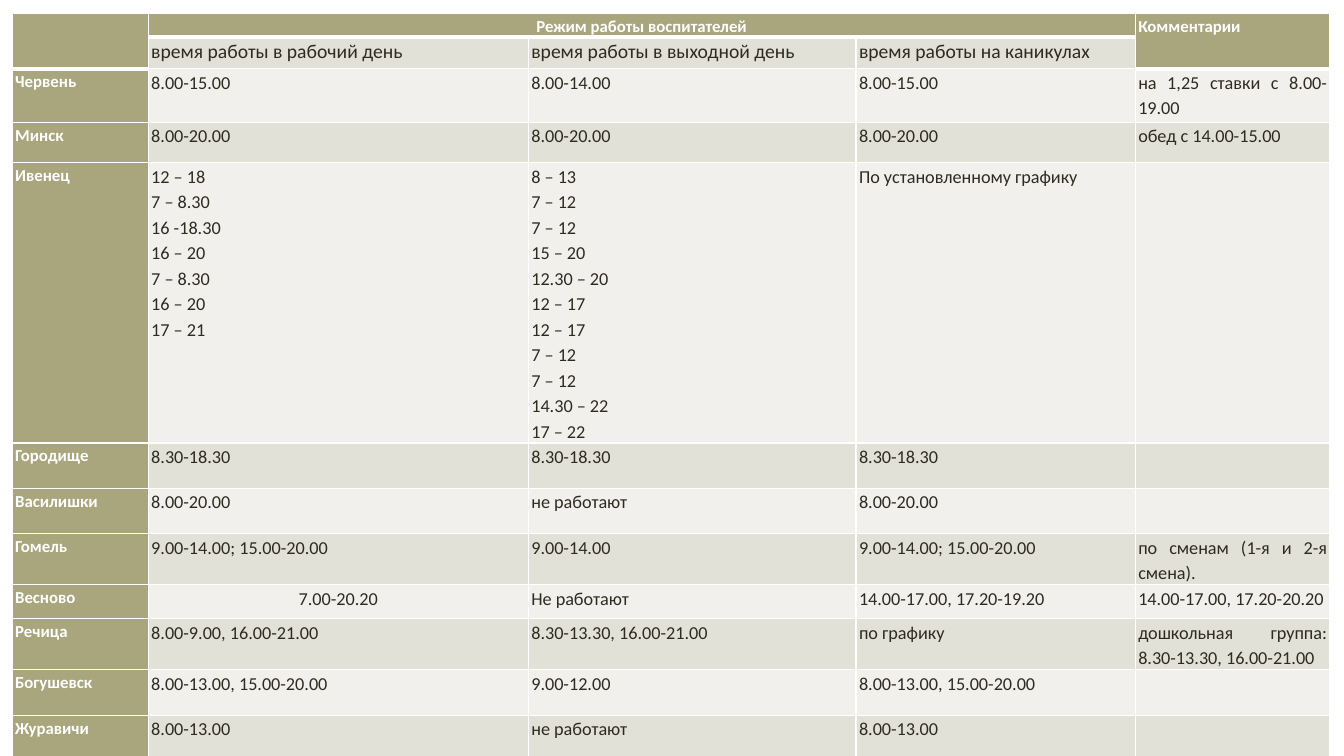
from lxml.etree import SubElement
from pptx import Presentation
from pptx.dml.color import RGBColor
from pptx.enum.text import PP_ALIGN
from pptx.oxml import parse_xml
from pptx.oxml.ns import nsdecls, qn
from pptx.util import Inches, Pt

# Content: town, working day, day off, holidays, comments
GROUP_TITLE = "Режим работы воспитателей"
COMMENTS_TITLE = "Комментарии"
SUBTITLES = [
    "время работы в рабочий день",
    "время работы в выходной день",
    "время работы на каникулах",
]
SCHEDULE = [
    ("Червень", "8.00-15.00", "8.00-14.00", "8.00-15.00", "на 1,25 ставки с 8.00-19.00"),
    ("Минск", "8.00-20.00", "8.00-20.00", "8.00-20.00", "обед с 14.00-15.00"),
    ("Ивенец",
     "12 – 18\n7 – 8.30\n16 -18.30\n16 – 20\n7 – 8.30\n16 – 20\n17 – 21",
     "8 – 13\n7 – 12\n7 – 12\n15 – 20\n12.30 – 20\n12 – 17\n12 – 17\n"
     "7 – 12\n7 – 12\n14.30 – 22\n17 – 22",
     "По установленному графику", ""),
    ("Городище", "8.30-18.30", "8.30-18.30", "8.30-18.30", ""),
    ("Василишки", "8.00-20.00", "не работают", "8.00-20.00", ""),
    ("Гомель", "9.00-14.00; 15.00-20.00", "9.00-14.00", "9.00-14.00; 15.00-20.00",
     "по сменам (1-я и 2-я смена)."),
    ("Весново", "7.00-20.20", "Не работают", "14.00-17.00, 17.20-19.20",
     "14.00-17.00, 17.20-20.20"),
    ("Речица", "8.00-9.00, 16.00-21.00", "8.30-13.30, 16.00-21.00", "по графику",
     "дошкольная группа: 8.30-13.30, 16.00-21.00"),
    ("Богушевск", "8.00-13.00, 15.00-20.00", "9.00-12.00", "8.00-13.00, 15.00-20.00", ""),
    ("Журавичи", "8.00-13.00", "не работают", "8.00-13.00", ""),
]
ROWS = [("", GROUP_TITLE, "", "", COMMENTS_TITLE), ("", *SUBTITLES, ""), *SCHEDULE]
CENTRED = {GROUP_TITLE, "7.00-20.20"}

# Layout and colours
LEFT, TOP = 0.12, 0.13
COLUMN_WIDTHS = [1.35, 3.77, 3.25, 2.77, 1.93]
ROW_HEIGHTS = [0.23, 0.32, 0.53, 0.4, 2.6, 0.45, 0.45, 0.46, 0.34, 0.46, 0.45, 0.45]
OLIVE, DARK_BAND, LIGHT_BAND = "A9A57C", "E2E1D7", "F1F0EC"
WHITE, INK = "FFFFFF", "2E2B21"
FONT = "Calibri"
LAST_COLUMN = len(COLUMN_WIDTHS) - 1


def color(hex_value):
    return RGBColor.from_string(hex_value)


def write_text(cell, text, size, ink, bold=False, align=PP_ALIGN.JUSTIFY):
    cell.margin_left = cell.margin_right = Inches(0.03)
    cell.margin_top = cell.margin_bottom = 0
    cell.text_frame.text = text
    for paragraph in cell.text_frame.paragraphs:
        paragraph.alignment = align
        paragraph.line_spacing = 1.15
        for run in paragraph.runs:
            run.font.name = FONT
            run.font.size = Pt(size)
            run.font.bold = bold
            run.font.color.rgb = color(ink)
        if not text:  # keeps empty cells from stretching their row
            SubElement(paragraph._p, qn("a:endParaRPr"), sz=str(size * 100))


def has_thick_bottom(row, column):
    return row == 0 or (row == 1 and column in (0, LAST_COLUMN))


def draw_borders(cell, row, column):
    top = 3 if row and has_thick_bottom(row - 1, column) else 1
    bottom = 3 if has_thick_bottom(row, column) else 1
    sides = [("lnL", 1), ("lnR", 1), ("lnT", top), ("lnB", bottom)]
    properties = cell._tc.get_or_add_tcPr()
    for position, (side, width) in enumerate(sides):
        properties.insert(position, parse_xml(
            f'<a:{side} {nsdecls("a")} w="{Pt(width)}"><a:solidFill>'
            f'<a:srgbClr val="{WHITE}"/></a:solidFill></a:{side}>'))


def main():
    presentation = Presentation()
    presentation.slide_width = Inches(13.33)
    presentation.slide_height = Inches(7.5)
    slide = presentation.slides.add_slide(presentation.slide_layouts[6])

    # Table grid
    table = slide.shapes.add_table(
        len(ROWS), len(COLUMN_WIDTHS), Inches(LEFT), Inches(TOP),
        Inches(sum(COLUMN_WIDTHS)), Inches(sum(ROW_HEIGHTS))).table
    for table_column, width in zip(table.columns, COLUMN_WIDTHS):
        table_column.width = Inches(width)
    for table_row, height in zip(table.rows, ROW_HEIGHTS):
        table_row.height = Inches(height)

    # Cells: olive headings, alternating bands below
    for row, texts in enumerate(ROWS):
        for column, text in enumerate(texts):
            cell = table.cell(row, column)
            heading = row == 0 or column == 0 or (row == 1 and column == LAST_COLUMN)
            band = DARK_BAND if row % 2 else LIGHT_BAND
            cell.fill.solid()
            cell.fill.fore_color.rgb = color(OLIVE if heading else band)
            write_text(
                cell, text,
                size=12 if heading else 14 if row == 1 else 13,
                ink=WHITE if heading else INK,
                bold=heading,
                align=PP_ALIGN.CENTER if text in CENTRED else PP_ALIGN.JUSTIFY)
            draw_borders(cell, row, column)

    # Merged headings
    table.cell(0, 1).merge(table.cell(0, LAST_COLUMN - 1))
    for column in (0, LAST_COLUMN):
        table.cell(0, column).merge(table.cell(1, column))

    presentation.save("out.pptx")


if __name__ == "__main__":
    main()
